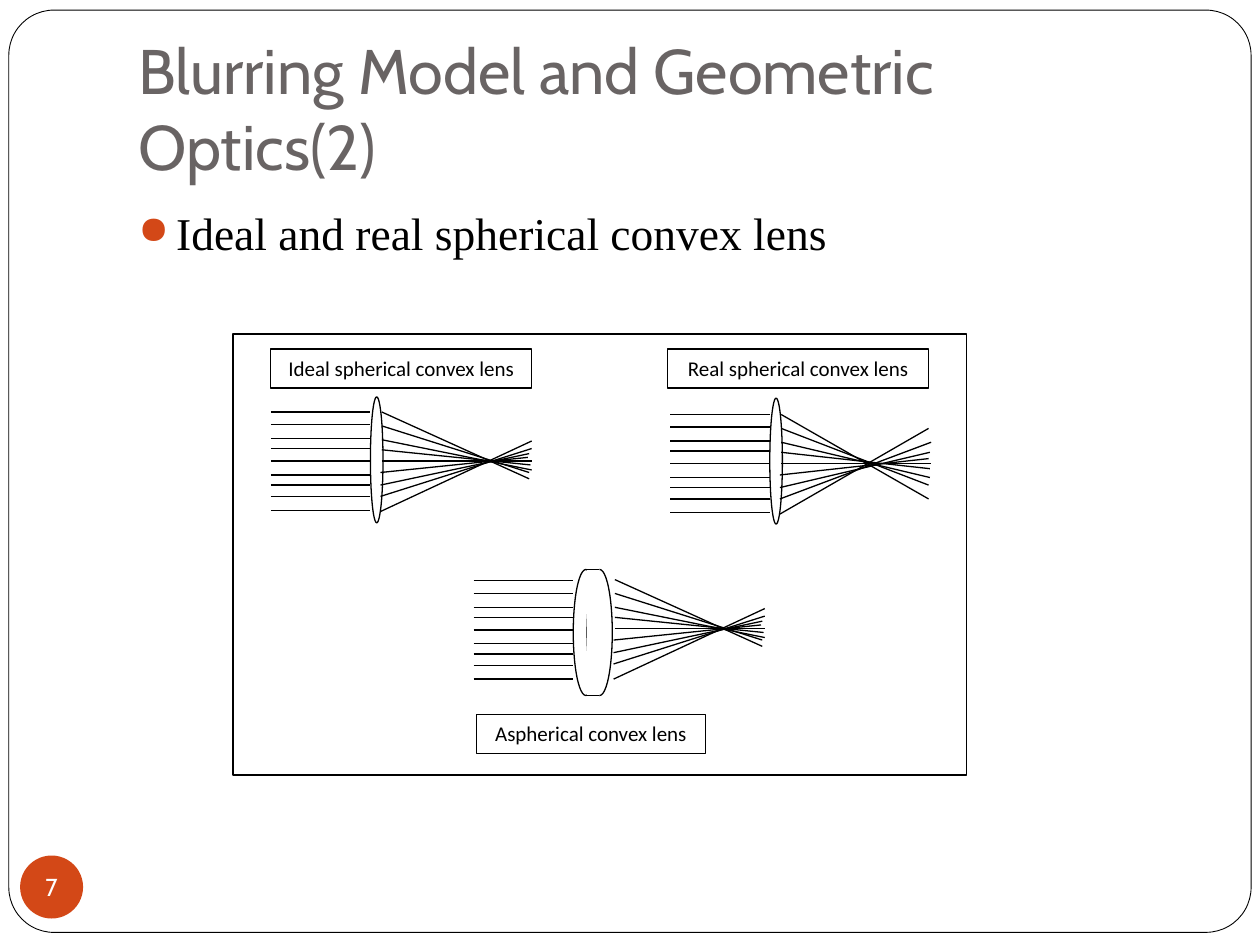
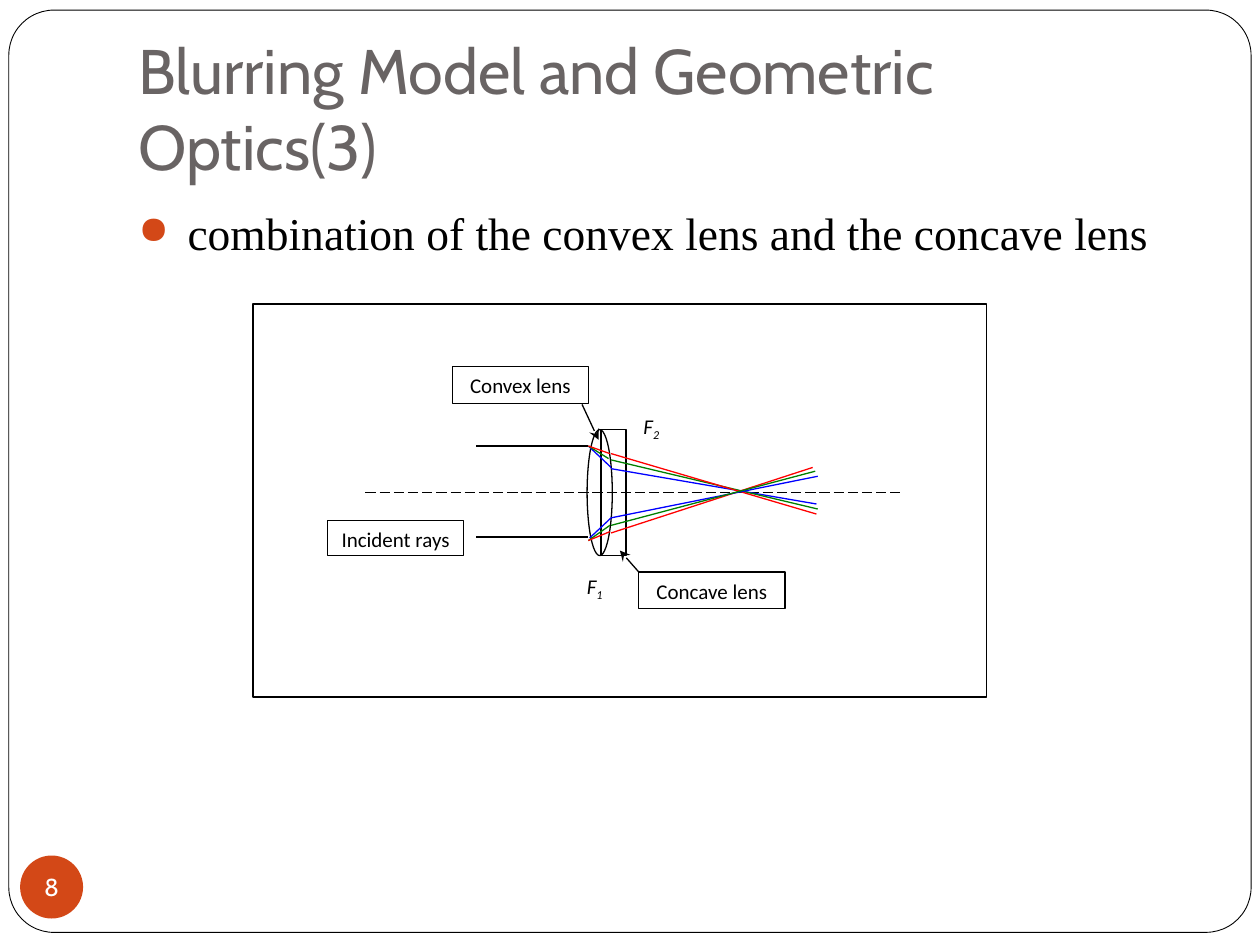
"""Builds two slides on blurring and geometric optics with lens ray diagrams."""
from dataclasses import dataclass

from lxml.etree import SubElement
from pptx import Presentation
from pptx.dml.color import RGBColor
from pptx.enum.dml import MSO_LINE
from pptx.enum.shapes import MSO_CONNECTOR, MSO_SHAPE
from pptx.enum.text import MSO_ANCHOR, PP_ALIGN
from pptx.oxml.ns import qn
from pptx.util import Inches, Pt


@dataclass(frozen=True)
class Theme:
    """Colours, fonts and type sizes shared by the slides."""
    accent: str = "D34817"
    title: str = "696464"
    ink: str = "000000"
    paper: str = "FFFFFF"
    blue: str = "0000FF"
    green: str = "008000"
    red: str = "FF0000"
    head_font: str = "Cabin"
    body_font: str = "Times New Roman"
    label_font: str = "Calibri"
    title_size: int = 36
    body_size: int = 26
    label_size: int = 12
    number_size: int = 14
    thin: float = 0.75
    frame: float = 1


T = Theme()

PAGES = [
    (7, "Blurring Model and Geometric Optics(2)", "Ideal and real spherical convex lens"),
    (8, "Blurring Model and Geometric Optics(3)",
     " combination of the convex lens and the concave lens"),
]

RAY_HEIGHTS = [0, 0.1, 0.21, 0.29, 0.39, 0.5, 0.58, 0.67, 0.78]
RAY_LENGTH = 0.79
FAN_STARTS = [(0, 0.39), (0, 0), (0, 0.11), (0, 0.22), (0, 0.3),
              (-0.01, 0.79), (-0.01, 0.67), (-0.01, 0.58), (-0.01, 0.48)]
SHARP_FAN = [(1.19, 0.39), (1.17, 0.53), (1.17, 0.48), (1.19, 0.46), (1.18, 0.42),
             (1.19, 0.23), (1.19, 0.29), (1.17, 0.33), (1.16, 0.36)]
SPREAD_FAN = [(1.19, 0.39), (1.17, 0.67), (1.17, 0.56), (1.18, 0.5), (1.18, 0.43),
              (1.17, 0.11), (1.19, 0.22), (1.18, 0.3), (1.17, 0.35)]

SPHERICAL_LENSES = [
    ((2.94, 3.15, 0.1, 1), (2.15, 3.27), (3.03, 3.27), SHARP_FAN),
    ((6.11, 3.16, 0.1, 1), (5.32, 3.29), (6.2, 3.29), SPREAD_FAN),
]
ASPHERICAL_RAYS = ((3.76, 4.61), (4.88, 4.6), SHARP_FAN)
LENS_LABELS = [
    ("Ideal spherical convex lens", (2.15, 2.77, 2.07, 0.31), T.paper),
    ("Real spherical convex lens", (5.3, 2.77, 2.07, 0.31), T.paper),
    ("Aspherical convex lens", (3.78, 5.67, 1.82, 0.31), None),
]

PAIR_LABELS = [
    ("Convex lens", (3.59, 2.91, 1.08, 0.29), None),
    ("Concave lens", (5.07, 4.54, 1.16, 0.29), None),
    ("Incident rays", (2.6, 4.13, 1.08, 0.28), None),
]
INCIDENT_HEIGHTS = [3.54, 4.26]
COLOUR_RAYS = [
    (T.blue, (4.67, 3.54), (4.85, 3.71)),
    (T.blue, (4.68, 4.27), (4.85, 4.11)),
    (T.green, (4.67, 3.54), (4.83, 3.64)),
    (T.red, (4.67, 3.54), (4.84, 3.6)),
    (T.green, (4.67, 4.29), (4.84, 4.17)),
    (T.red, (4.67, 4.29), (4.84, 4.22)),
    (T.blue, (4.85, 3.72), (6.48, 4)),
    (T.green, (4.85, 3.65), (6.49, 4.04)),
    (T.red, (4.85, 3.6), (6.48, 4.08)),
    (T.red, (4.85, 4.23), (6.45, 3.71)),
    (T.blue, (4.85, 4.11), (6.49, 3.78)),
    (T.green, (4.85, 4.17), (6.47, 3.74)),
]
POINTERS = [((4.62, 3.21), (4.75, 3.49)), ((5.07, 4.54), (4.92, 4.37))]
FOCAL_MARKS = [("1", (4.51, 4.5, 0.42, 0.38)), ("2", (4.96, 3.23, 0.42, 0.38))]


def rgb(colour):
    return RGBColor.from_string(colour)


def add_text(sp, text, font=T.label_font, size=T.label_size, colour=T.ink,
             align=PP_ALIGN.CENTER, anchor=MSO_ANCHOR.TOP, insets=(0.1, 0.05, 0.1, 0.05),
             wrap=True, italic=False, subscript=None):
    tf = sp.text_frame
    tf.word_wrap = wrap
    tf.vertical_anchor = anchor
    tf.margin_left, tf.margin_top, tf.margin_right, tf.margin_bottom = map(Inches, insets)
    p = tf.paragraphs[0]
    p.alignment = align
    for part in filter(None, (text, subscript)):
        r = p.add_run()
        r.text = part
        r.font.name, r.font.size, r.font.italic = font, Pt(size), italic
        r.font.color.rgb = rgb(colour)
    if subscript:
        r.font._element.set("baseline", "-25000")
    return p


def add_box(s, kind, box, fill=None, line=T.ink, width=T.thin):
    sp = s.shapes.add_shape(kind, *map(Inches, box))
    sp.shadow.inherit = False
    if fill:
        sp.fill.solid()
        sp.fill.fore_color.rgb = rgb(fill)
    else:
        sp.fill.background()
    if line:
        sp.line.color.rgb = rgb(line)
        sp.line.width = Pt(width)
    else:
        sp.line.fill.background()
    return sp


def add_textbox(s, box):
    return s.shapes.add_textbox(*map(Inches, box))


def add_line(s, start, end, colour=T.ink, width=T.thin, dash=None, arrow=False):
    cx = s.shapes.add_connector(MSO_CONNECTOR.STRAIGHT, *map(Inches, (*start, *end)))
    cx.line.color.rgb = rgb(colour)
    cx.line.width = Pt(width)
    if dash:
        cx.line.dash_style = dash
    if arrow:
        SubElement(cx.line._get_or_add_ln(), qn("a:tailEnd"), type="stealth")
    SubElement(cx._element.spPr, qn("a:effectLst"))


def add_bullet(p):
    p.space_before = Pt(5.8)
    pPr = p._p.get_or_add_pPr()
    pPr.set("marL", str(Inches(0.3)))
    pPr.set("indent", str(Inches(-0.3)))
    SubElement(SubElement(pPr, qn("a:buClr")), qn("a:srgbClr"), val=T.accent)
    SubElement(pPr, qn("a:buSzPct"), val="85000")
    SubElement(pPr, qn("a:buChar"), char="●")


def add_page(prs, number, title, bullet):
    s = prs.slides.add_slide(prs.slide_layouts[6])
    border = add_box(s, MSO_SHAPE.ROUNDED_RECTANGLE, (0.07, 0.08, 9.86, 7.32), T.paper, width=0.5)
    border.adjustments[0] = 0.049
    add_text(add_textbox(s, (1, 0.3, 8.5, 1.25)), title, font=T.head_font, size=T.title_size,
             colour=T.title, align=PP_ALIGN.LEFT, anchor=MSO_ANCHOR.BOTTOM,
             insets=(0.1, 0.05, 0.1, 0.1))
    badge = add_box(s, MSO_SHAPE.OVAL, (0.16, 6.79, 0.5, 0.5), T.accent, line=None)
    add_text(badge, str(number), font=T.head_font, size=T.number_size, colour=T.paper,
             anchor=MSO_ANCHOR.MIDDLE, insets=(0, 0, 0, 0), wrap=False)
    add_bullet(add_text(add_textbox(s, (1, 1.58, 8.5, 5)), bullet, font=T.body_font,
                        size=T.body_size, align=PP_ALIGN.LEFT))
    return s


def add_rays(s, inlet, outlet, fan):
    x, y = inlet
    for dy in RAY_HEIGHTS:
        add_line(s, (x, y + dy), (x + RAY_LENGTH, y + dy))
    x, y = outlet
    for (x1, y1), (x2, y2) in zip(FAN_STARTS, fan):
        add_line(s, (x + x1, y + y1), (x + x2, y + y2))


def add_labels(s, labels):
    for text, box, fill in labels:
        add_text(add_box(s, MSO_SHAPE.RECTANGLE, box, fill), text)


def draw_lens_types(s):
    add_box(s, MSO_SHAPE.RECTANGLE, (1.85, 2.65, 5.82, 3.5), width=T.frame)
    for lens, inlet, outlet, fan in SPHERICAL_LENSES:
        add_box(s, MSO_SHAPE.OVAL, lens, T.paper)
        add_rays(s, inlet, outlet, fan)
    for x in (4.55, 4.66):
        add_box(s, MSO_SHAPE.OVAL, (x, 4.52, 0.2, 1), T.paper)
    add_box(s, MSO_SHAPE.RECTANGLE, (4.66, 4.52, 0.1, 1), T.paper, line=None)
    for y in (4.52, 5.52):
        add_line(s, (4.66, y), (4.75, y))
    add_rays(s, *ASPHERICAL_RAYS)
    add_labels(s, LENS_LABELS)


def draw_lens_pair(s):
    add_box(s, MSO_SHAPE.RECTANGLE, (2.01, 2.41, 5.82, 3.12), width=T.frame)
    add_box(s, MSO_SHAPE.RECTANGLE, (4.77, 3.41, 0.2, 1))
    add_box(s, MSO_SHAPE.OVAL, (4.66, 3.41, 0.2, 1))
    for y in INCIDENT_HEIGHTS:
        add_line(s, (3.78, y), (4.67, y), width=T.frame)
    add_line(s, (2.9, 3.91), (7.14, 3.91), dash=MSO_LINE.LONG_DASH)
    for colour, start, end in COLOUR_RAYS:
        add_line(s, start, end, colour)
    add_labels(s, PAIR_LABELS)
    for start, end in POINTERS:
        add_line(s, start, end, arrow=True)
    for index, box in FOCAL_MARKS:
        add_text(add_textbox(s, box), "F", italic=True, subscript=index)


def main():
    prs = Presentation()
    prs.slide_width, prs.slide_height = Inches(10), Inches(7.5)
    for page, draw in zip(PAGES, (draw_lens_types, draw_lens_pair)):
        draw(add_page(prs, *page))
    prs.save("out.pptx")


if __name__ == "__main__":
    main()
